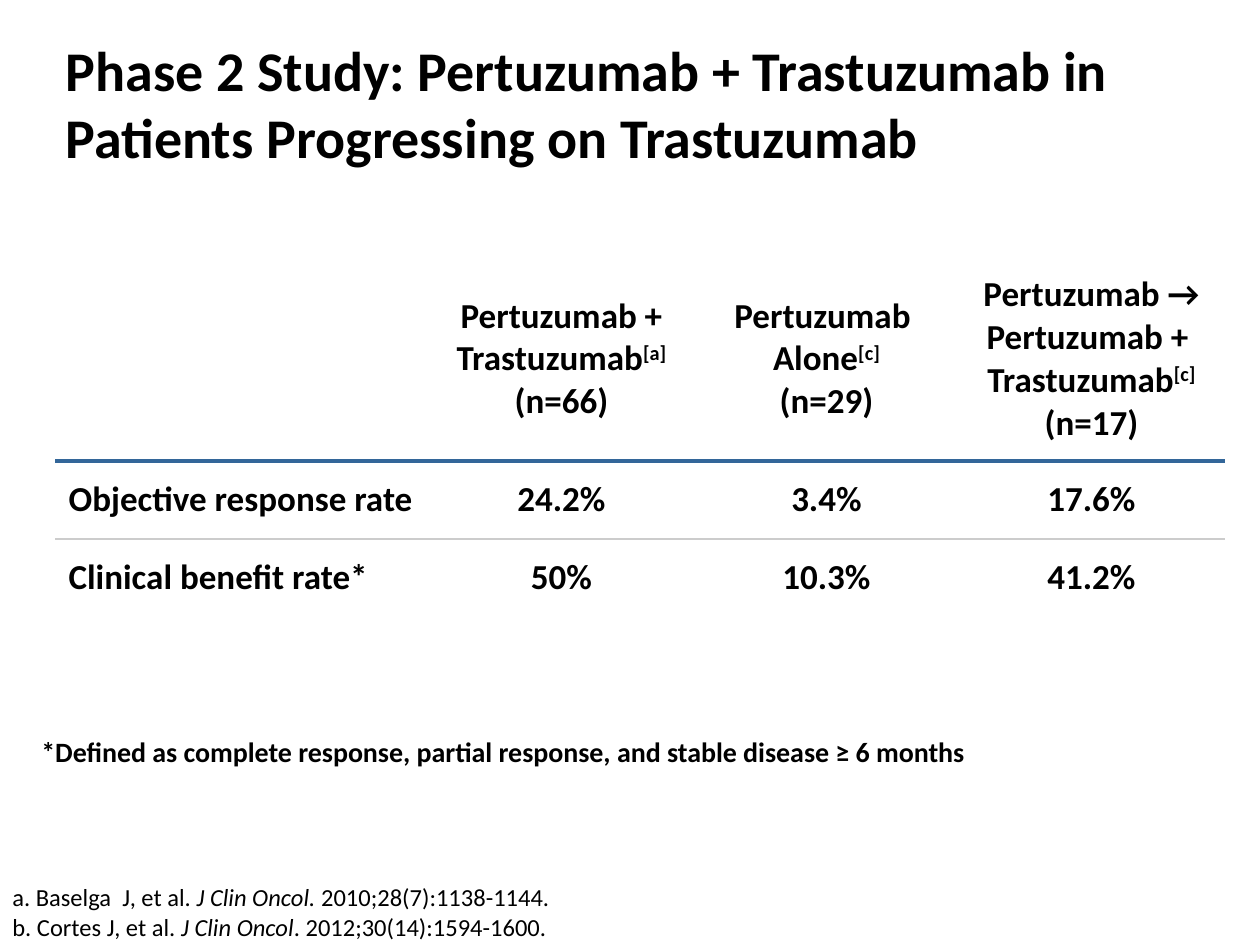
from dataclasses import dataclass

from lxml import etree
from pptx import Presentation
from pptx.dml.color import RGBColor
from pptx.enum.text import MSO_ANCHOR, MSO_AUTO_SIZE, PP_ALIGN
from pptx.oxml.ns import qn
from pptx.util import Pt

LEFT, CENTER = PP_ALIGN.LEFT, PP_ALIGN.CENTER
MIDDLE = MSO_ANCHOR.MIDDLE
NO_FIT, GROW = MSO_AUTO_SIZE.NONE, MSO_AUTO_SIZE.SHAPE_TO_FIT_TEXT
EMU_PER_INCH, PX_PER_INCH = 914400, 126
TITLE_ONLY = 5
PLAIN, ITALIC, SUPER = "plain", "italic", "super"


@dataclass(frozen=True)
class Theme:
    font: str = "Calibri"
    text: str = "000000"
    header_rule: str = "336699"
    row_rule: str = "CCCCCC"
    title_size: int = 32
    table_size: int = 20
    note_size: int = 16
    reference_size: int = 14
    header_rule_width: float = 2.25
    row_rule_width: float = 0.75


THEME = Theme()

TITLE = "Phase 2 Study: Pertuzumab + Trastuzumab in Patients Progressing on Trastuzumab"
NOTE = "*Defined as complete response, partial response, and stable disease ≥ 6 months"
REFERENCES = [
    [("a. Baselga  J, et al. ", PLAIN), ("J Clin Oncol. ", ITALIC),
     ("2010;28(7):1138-1144.", PLAIN)],
    [("b. Cortes J, et al. ", PLAIN), ("J Clin Oncol", ITALIC),
     (". 2012;30(14):1594-1600.", PLAIN)],
]


def plain(text):
    """One paragraph holding one unstyled span."""
    return [[(text, PLAIN)]]


HEADERS = [
    plain(""),
    [[("Pertuzumab + Trastuzumab", PLAIN), ("[a]", SUPER)], [("(n=66)", PLAIN)]],
    [[("Pertuzumab \nAlone", PLAIN), ("[c]\n", SUPER), ("(n=29)", PLAIN)]],
    [[("Pertuzumab → Pertuzumab + \nTrastuzumab", PLAIN), ("[c]", SUPER)],
     [("(n=17)", PLAIN)]],
]
RATES = [
    ["Objective response rate", "24.2%", "3.4%", "17.6%"],
    ["Clinical benefit rate*", "50%", "10.3%", "41.2%"],
]
COLUMN_WIDTHS = [373, 265, 265, 265]
ROW_HEIGHTS = [204, 78, 78]


def px(length):
    return round(length * EMU_PER_INCH / PX_PER_INCH)


def add_span(para, text, style):
    """Add text to a paragraph, turning each newline into a line break."""
    for index, line in enumerate(text.split("\n")):
        if index:
            para.add_line_break()
        if not line:
            continue
        span = para.add_run()
        span.text = line
        if style == ITALIC:
            span.font.italic = True
        elif style == SUPER:
            span._r.get_or_add_rPr().set("baseline", "30000")


def write(frame, paragraphs, size, bold=False, align=LEFT):
    for index, spans in enumerate(paragraphs):
        para = frame.add_paragraph() if index else frame.paragraphs[0]
        para.alignment = align
        font = para.font
        font.name, font.size, font.bold = THEME.font, Pt(size), bold
        font.color.rgb = RGBColor.from_string(THEME.text)
        for text, style in spans:
            add_span(para, text, style)


def set_title(page):
    title = page.shapes.title
    title.left, title.top, title.width, title.height = map(px, (53, 38, 1144, 130))
    frame = title.text_frame
    frame.auto_size, frame.vertical_anchor = NO_FIT, MIDDLE
    write(frame, plain(TITLE), THEME.title_size, bold=True)


def add_text(page, place, paragraphs, size, bold=False):
    frame = page.shapes.add_textbox(*map(px, place)).text_frame
    frame.word_wrap, frame.auto_size = False, GROW
    write(frame, paragraphs, size, bold)


def add_border(cell, side, color, width):
    line = etree.SubElement(cell._tc.get_or_add_tcPr(), qn(f"a:ln{side}"), w=str(Pt(width)))
    fill = etree.SubElement(line, qn("a:solidFill"))
    etree.SubElement(fill, qn("a:srgbClr"), val=color)


def add_rate_table(page):
    rows = [HEADERS] + [[plain(text) for text in row] for row in RATES]
    rules = [(THEME.header_rule, THEME.header_rule_width),
             (THEME.row_rule, THEME.row_rule_width)]
    place = (56, 257, sum(COLUMN_WIDTHS), sum(ROW_HEIGHTS))
    table = page.shapes.add_table(len(rows), len(HEADERS), *map(px, place)).table
    table.first_row = table.horz_banding = False
    for column, width in zip(table.columns, COLUMN_WIDTHS):
        column.width = px(width)
    for row, height in zip(table.rows, ROW_HEIGHTS):
        row.height = px(height)
    for r, row in enumerate(rows):
        for c, paragraphs in enumerate(row):
            cell = table.cell(r, c)
            cell.vertical_anchor = MIDDLE
            if r > 0:
                add_border(cell, "T", *rules[r - 1])
            if r < len(rules):
                add_border(cell, "B", *rules[r])
            cell.fill.background()
            write(cell.text_frame, paragraphs, THEME.table_size, bold=True,
                  align=CENTER if c else LEFT)


def main():
    deck = Presentation()
    deck.slide_width, deck.slide_height = px(1260), px(945)
    page = deck.slides.add_slide(deck.slide_layouts[TITLE_ONLY])
    set_title(page)
    add_text(page, (0, 876, 568, 72), REFERENCES, THEME.reference_size)
    add_rate_table(page)
    add_text(page, (29, 728, 960, 47), plain(NOTE), THEME.note_size, bold=True)
    deck.save("out.pptx")


if __name__ == "__main__":
    main()
